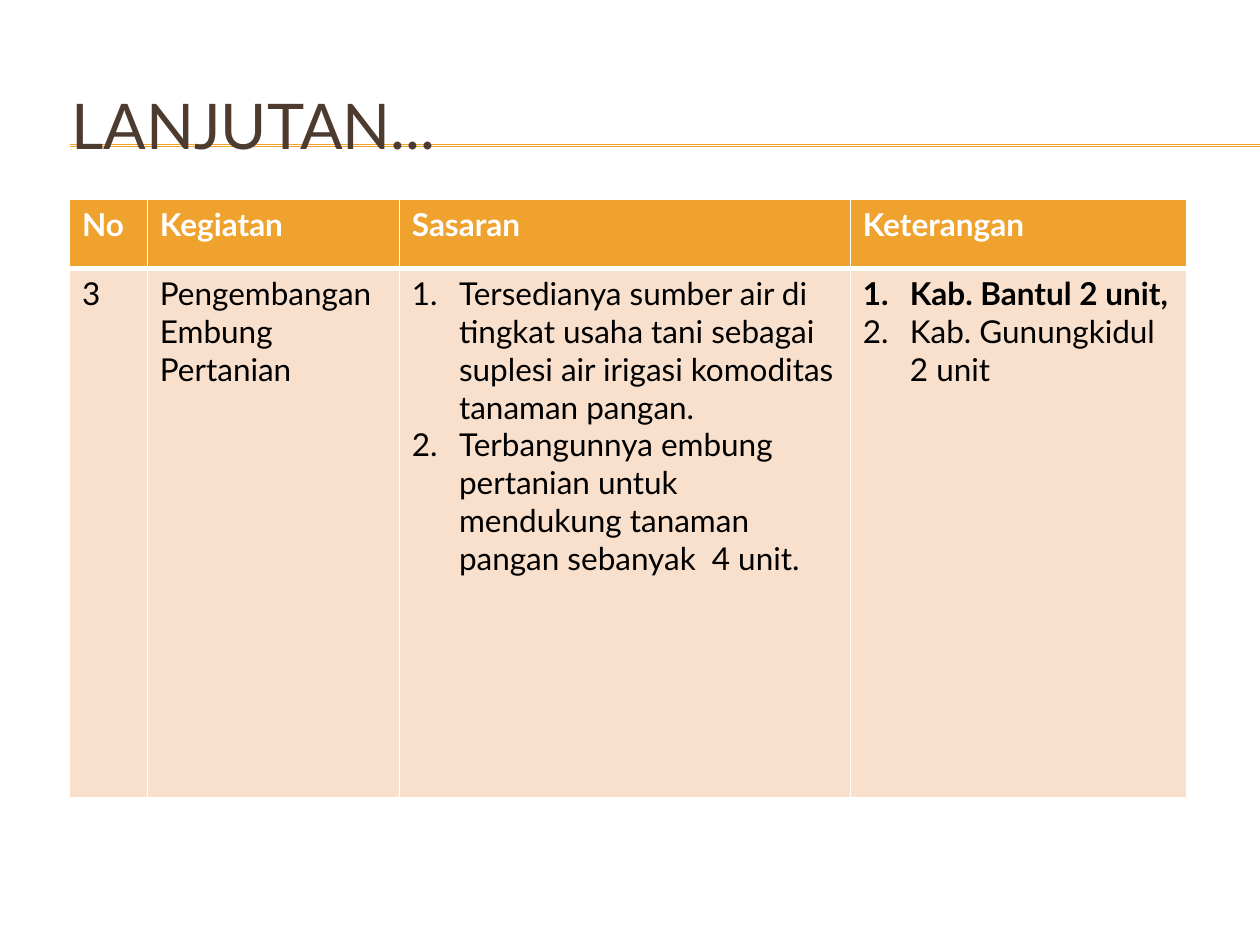
from dataclasses import dataclass

from lxml.etree import SubElement
from pptx import Presentation
from pptx.dml.color import RGBColor
from pptx.enum.shapes import MSO_CONNECTOR
from pptx.enum.text import MSO_ANCHOR
from pptx.oxml import parse_xml
from pptx.oxml.ns import nsdecls, qn
from pptx.util import Cm, Pt


@dataclass(frozen=True)
class Theme:
    font: str = "Lato"
    accent: str = "F0A22E"
    title: str = "4E3B30"
    body: str = "000000"
    white: str = "FFFFFF"
    body_fill: str = "F9E0CD"
    title_size: int = 36
    table_size: int = 18
    rule_width: float = 0.75
    border_width: int = 1
    header_border_width: int = 3


@dataclass(frozen=True)
class Line:
    text: str
    bold: bool = False
    numbered: bool = False


@dataclass(frozen=True)
class Column:
    heading: str
    width: float
    lines: tuple[Line, ...]


THEME = Theme()
SLIDE_WIDTH, SLIDE_HEIGHT = 25.4, 19.05
RULE_LEFT = 1.42
RULE_TOPS = (2.92, 2.95)
TABLE_LEFT, TABLE_TOP = 1.4, 4.01
ROW_HEIGHTS = (1.4, 10.67)
NUMBER_INDENT = 0.95

COLUMNS = (
    Column("No", 1.57, (Line("3"),)),
    Column("Kegiatan", 5.08, (Line("Pengembangan Embung Pertanian"),)),
    Column("Sasaran", 9.09, (
        Line("Tersedianya sumber air di tingkat usaha tani sebagai suplesi air "
             "irigasi komoditas tanaman pangan.", numbered=True),
        Line("Terbangunnya embung pertanian untuk mendukung tanaman pangan "
             "sebanyak  4 unit.", numbered=True),
    )),
    Column("Keterangan", 6.78, (
        Line("Kab. Bantul 2 unit,", bold=True, numbered=True),
        Line("Kab. Gunungkidul 2 unit", numbered=True),
    )),
)


def add_rule(slide, top: float) -> None:
    rule = slide.shapes.add_connector(
        MSO_CONNECTOR.STRAIGHT, Cm(RULE_LEFT), Cm(top), Cm(SLIDE_WIDTH), Cm(top))
    rule.line.color.rgb = RGBColor.from_string(THEME.accent)
    rule.line.width = Pt(THEME.rule_width)
    SubElement(rule._element.spPr, qn("a:effectLst"))


def number_paragraph(paragraph) -> None:
    properties = paragraph._p.get_or_add_pPr()
    indent = Cm(NUMBER_INDENT)
    for name, value in {"marL": indent, "indent": -indent}.items():
        properties.set(name, str(int(value)))
    SubElement(properties, qn("a:buFont"), typeface="+mj-lt")
    SubElement(properties, qn("a:buAutoNum"), type="arabicPeriod")


def write_lines(text_frame, lines: tuple[Line, ...], color: str, size: int) -> None:
    for index, line in enumerate(lines):
        paragraph = text_frame.paragraphs[0] if index == 0 else text_frame.add_paragraph()
        if line.numbered:
            number_paragraph(paragraph)
        run = paragraph.add_run()
        run.text = line.text
        font_format = {"name": THEME.font, "size": Pt(size), "bold": line.bold}
        for name, value in font_format.items():
            setattr(run.font, name, value)
        run.font.color.rgb = RGBColor.from_string(color)


def set_borders(cell, top: float, bottom: float) -> None:
    """Draw white borders; schema order puts them ahead of the cell fill."""
    side = THEME.border_width
    widths = {"lnL": side, "lnR": side, "lnT": top, "lnB": bottom}
    properties = cell._tc.get_or_add_tcPr()
    for index, (tag, width) in enumerate(widths.items()):
        properties.insert(index, parse_xml(
            f'<a:{tag} {nsdecls("a")} w="{int(Pt(width))}"><a:solidFill>'
            f'<a:srgbClr val="{THEME.white}"/></a:solidFill></a:{tag}>'))


def fill_cell(cell, lines: tuple[Line, ...], color: str, fill: str,
              top: float, bottom: float) -> None:
    cell.fill.solid()
    cell.fill.fore_color.rgb = RGBColor.from_string(fill)
    set_borders(cell, top, bottom)
    write_lines(cell.text_frame, lines, color, THEME.table_size)


def add_title(slide, text: str) -> None:
    title = slide.shapes.add_textbox(Cm(1.19), Cm(1.4), Cm(22.86), Cm(2.21))
    frame_format = {"word_wrap": True, "vertical_anchor": MSO_ANCHOR.MIDDLE}
    for name, value in frame_format.items():
        setattr(title.text_frame, name, value)
    write_lines(title.text_frame, (Line(text),), THEME.title, THEME.title_size)


def add_activity_table(slide) -> None:
    table = slide.shapes.add_table(
        len(ROW_HEIGHTS), len(COLUMNS), Cm(TABLE_LEFT), Cm(TABLE_TOP),
        Cm(sum(column.width for column in COLUMNS)), Cm(sum(ROW_HEIGHTS))).table
    for row, height in zip(table.rows, ROW_HEIGHTS):
        row.height = Cm(height)
    thin, thick = THEME.border_width, THEME.header_border_width
    for index, column in enumerate(COLUMNS):
        table.columns[index].width = Cm(column.width)
        fill_cell(table.cell(0, index), (Line(column.heading, bold=True),),
                  THEME.white, THEME.accent, thin, thick)
        fill_cell(table.cell(1, index), column.lines,
                  THEME.body, THEME.body_fill, thick, thin)


def main() -> None:
    presentation = Presentation()
    presentation.slide_width = Cm(SLIDE_WIDTH)
    presentation.slide_height = Cm(SLIDE_HEIGHT)
    slide = presentation.slides.add_slide(presentation.slide_layouts[6])
    for top in RULE_TOPS:
        add_rule(slide, top)
    add_title(slide, "LANJUTAN...")
    add_activity_table(slide)
    presentation.save("out.pptx")


if __name__ == "__main__":
    main()
